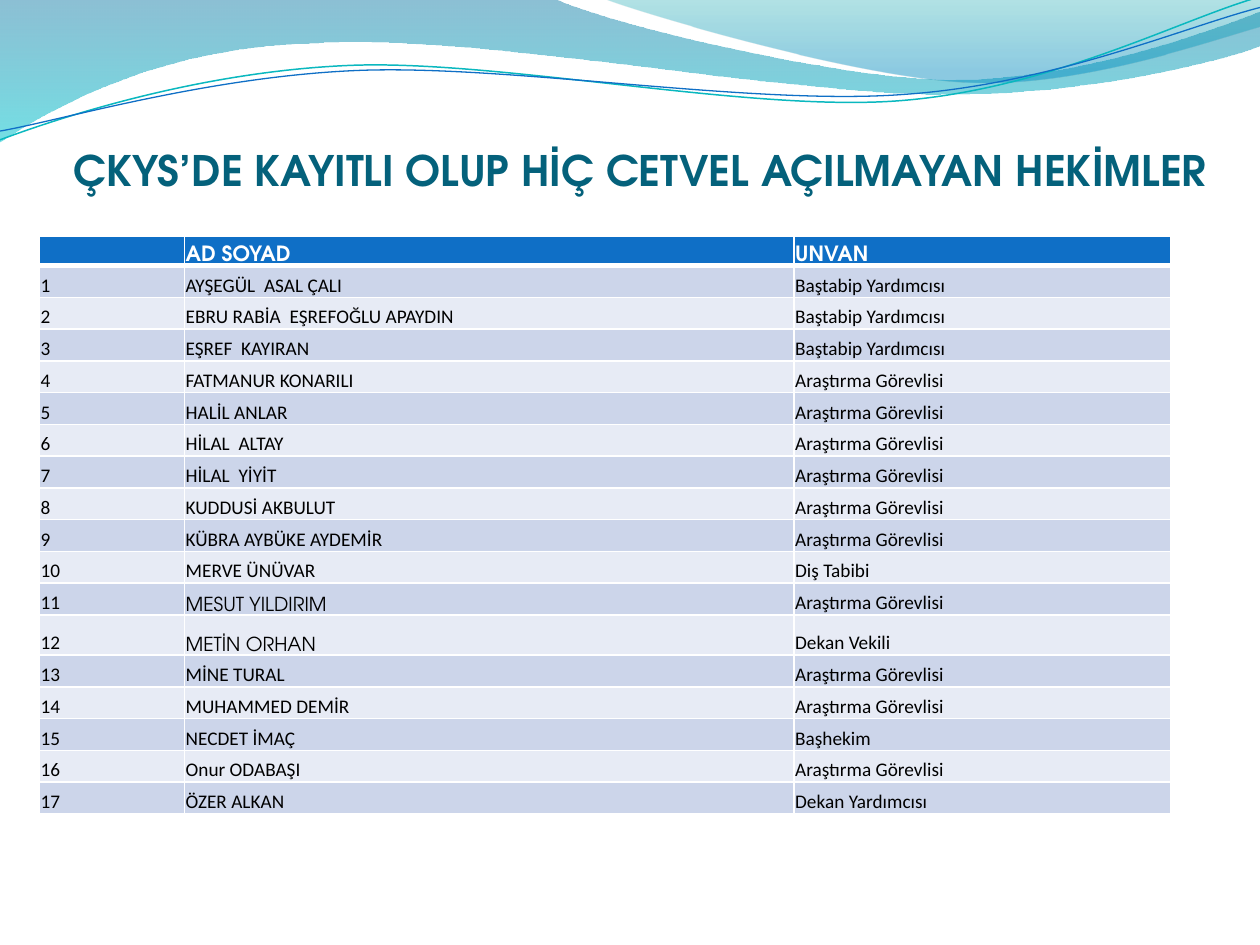
from itertools import chain
from math import cos, radians, sin

from lxml.etree import SubElement
from pptx import Presentation
from pptx.dml.color import RGBColor
from pptx.enum.text import MSO_ANCHOR as Anchor, PP_ALIGN as Align
from pptx.oxml.ns import qn
from pptx.util import Pt

WHITE = RGBColor(0xFF, 0xFF, 0xFF)
BLACK = RGBColor(0, 0, 0)
BLUE = RGBColor(0x0F, 0x6F, 0xC6)
TEAL = RGBColor(0x0A, 0xB8, 0xBF)
TITLE_TEAL = RGBColor(0x04, 0x61, 0x7B)
DEEP_BLUE = RGBColor(0x00, 0x74, 0xA1)
CYAN = RGBColor(0x00, 0xC6, 0xCF)
SEA_GREEN = RGBColor(0x00, 0xA1, 0xA9)
SKY_BLUE = RGBColor(0x00, 0x8B, 0xBF)
ODD_ROW = RGBColor(0xCC, 0xD5, 0xEA)
EVEN_ROW = RGBColor(0xE7, 0xEB, 0xF5)

DISPLAY, BODY = "TeX Gyre Adventor", "Calibri"
STRAND_TILT = 2.7

HEADER = ("", "AD SOYAD", "UNVAN")
RESIDENT, DEPUTY = "Araştırma Görevlisi", "Baştabip Yardımcısı"
DOCTORS = [
    ("AYŞEGÜL  ASAL ÇALI", DEPUTY),
    ("EBRU RABİA  EŞREFOĞLU APAYDIN", DEPUTY),
    ("EŞREF  KAYIRAN", DEPUTY),
    ("FATMANUR KONARILI", RESIDENT),
    ("HALİL ANLAR", RESIDENT),
    ("HİLAL  ALTAY", RESIDENT),
    ("HİLAL  YİYİT", RESIDENT),
    ("KUDDUSİ AKBULUT", RESIDENT),
    ("KÜBRA AYBÜKE AYDEMİR", RESIDENT),
    ("MERVE ÜNÜVAR", "Diş Tabibi"),
    ("MESUT YILDIRIM", RESIDENT),
    ("METİN ORHAN", "Dekan Vekili"),
    ("MİNE TURAL", RESIDENT),
    ("MUHAMMED DEMİR", RESIDENT),
    ("NECDET İMAÇ", "Başhekim"),
    ("Onur ODABAŞI", RESIDENT),
    ("ÖZER ALKAN", "Dekan Yardımcısı"),
]
DISPLAY_NAMES = {"MESUT YILDIRIM", "METİN ORHAN"}
TALL_ROW = 12


def outline(slide, box, start, segments, close):
    """Freeform from segments of one point (line) or three (cubic curve)."""
    left, top = box[:2]
    placed = [(Pt(left + x), Pt(top + y)) for x, y in chain([start], *segments)]
    builder = slide.shapes.build_freeform(*placed[0])
    builder.add_line_segments(placed[1:], close=close)
    shape = builder.convert_to_shape()
    shape.shadow.inherit = False
    # Join the lines of each three-point segment into one curve
    lines = iter(list(shape._element.spPr.iter(qn("a:lnTo"))))
    for segment in segments:
        first, *others = [next(lines) for _ in segment]
        if others:
            first.tag = qn("a:cubicBezTo")
        for line in others:
            first.append(line[0])
            line.getparent().remove(line)
    return shape


def add_wave(slide, box, start, segments, stops):
    wave = outline(slide, box, start, segments, True)
    wave.line.fill.background()
    wave.fill.gradient()
    wave.fill.gradient_angle = 270
    for stop, (position, colour, opacity) in zip(wave.fill.gradient_stops, stops):
        stop.position = position
        stop.color.rgb = colour
    for tint, (_, _, opacity) in zip(wave._element.spPr.iter(qn("a:srgbClr")), stops):
        SubElement(tint, qn("a:alpha"), val=str(opacity * 1000))


def add_strand(slide, box, start, segments, centre, colour, width):
    # Points are turned level first, then the shape carries the tilt
    c, s = cos(radians(STRAND_TILT)), sin(radians(STRAND_TILT))
    cx, cy = centre

    def level(point):
        dx, dy = point[0] - cx, point[1] - cy
        return cx + dx * c - dy * s, cy + dx * s + dy * c

    strand = outline(slide, box, level(start),
                     [[level(point) for point in segment] for segment in segments], False)
    strand.rotation = 360 - STRAND_TILT
    strand.fill.background()
    strand.line.color.rgb = colour
    strand.line.width = Pt(width)


def add_waves(slide, box):
    # Broad wave across the full width
    add_wave(slide, box, (0, 0), [
        [(316.8, -0.7)],
        [(342.7, 12.2), (478, 45.4), (545.8, 45.4)],
        [(614.2, 45.4), (689.8, 18.7), (720, 6.5)],
        [(720.7, 25.9)],
        [(707.8, 31.7), (626.4, 54.7), (537.1, 54)],
        [(447.8, 54), (275, 20.2), (185, 24.5)],
        [(92.9, 25.9), (33.1, 59.8), (-0.7, 81.4)],
        [(0, 0)],
    ], [(0, DEEP_BLUE, 45), (1, CYAN, 55)])
    # Smaller wave at the right
    add_wave(slide, box, (344.9, -0.7), [
        [(366.5, 7.9), (491, 44.6), (553.7, 46.8)],
        [(616.3, 49.7), (691.9, 23), (720, 15.1)],
        [(720, 0)],
        [(344.9, -0.7)],
    ], [(0, SEA_GREEN, 30), (0.8, SKY_BLUE, 45)])
    # Two thin strands
    add_strand(slide, box, (0, 79.9), [
        [(34.6, 67), (113.8, 41), (199.4, 37.4)],
        [(284.4, 33.8), (427, 64.1), (513.4, 57.6)],
        [(599.8, 51.1), (675.4, 10.8), (718.6, -1.4)],
    ], (359.3, 41.4), TEAL, 0.85)
    add_strand(slide, box, (0, 74.9), [
        [(33.8, 69.1), (118.1, 43.9), (203.8, 40.3)],
        [(290.2, 36.7), (429.8, 60.5), (516.2, 54)],
        [(601.9, 48.2), (677.5, 15.1), (720, 4.3)],
    ], (359.6, 42.5), BLUE, 0.75)


def add_run(paragraph, text, font, size, colour, bold=False):
    run = paragraph.add_run()
    run.text = text
    run.font.name, run.font.size, run.font.bold = font, Pt(size), bold
    run.font.color.rgb = colour


def add_title(slide, box):
    frame = slide.shapes.add_textbox(*map(Pt, box)).text_frame
    frame.word_wrap = True
    frame.vertical_anchor = Anchor.BOTTOM
    frame.margin_left = frame.margin_right = frame.margin_bottom = 0
    frame.margin_top = Pt(3.6)
    heading = frame.paragraphs[0]
    heading.alignment = Align.CENTER
    add_run(heading, "ÇKYS’DE KAYITLI OLUP HİÇ CETVEL AÇILMAYAN HEKİMLER",
            DISPLAY, 24, TITLE_TEAL, True)


def set_borders(cell, widths):
    for side, width in widths.items():
        border = SubElement(cell._tc.get_or_add_tcPr(), qn("a:ln" + side), w=str(Pt(width)))
        SubElement(SubElement(border, qn("a:solidFill")), qn("a:srgbClr"), val=str(WHITE))


def fill_cell(cell, text, row, fill):
    cell.margin_left = cell.margin_top = cell.margin_right = Pt(0.7)
    cell.margin_bottom = 0
    cell.vertical_anchor = Anchor.BOTTOM
    set_borders(cell, {"L": 1, "R": 1, "T": 3 if row == 1 else 1, "B": 3 if row == 0 else 1})
    cell.fill.solid()
    cell.fill.fore_color.rgb = fill
    paragraph = cell.text_frame.paragraphs[0]
    if not text:
        SubElement(paragraph._p, qn("a:endParaRPr"), sz="1200")
    elif row == 0:
        add_run(paragraph, text, DISPLAY, 12, WHITE, True)
    else:
        add_run(paragraph, text, DISPLAY if text in DISPLAY_NAMES else BODY, 11, BLACK)


def add_doctors(slide, box):
    rows = [HEADER] + [(str(n), *doctor) for n, doctor in enumerate(DOCTORS, 1)]
    table = slide.shapes.add_table(len(rows), len(HEADER), *map(Pt, box)).table
    for column, width in zip(table.columns, (82.8, 348.3, 215.5)):
        column.width = Pt(width)
    for r, texts in enumerate(rows):
        table.rows[r].height = Pt({0: 16.8, TALL_ROW: 23}.get(r, 18.16))
        fill = BLUE if r == 0 else ODD_ROW if r % 2 else EVEN_ROW
        for c, text in enumerate(texts):
            fill_cell(table.cell(r, c), text, r, fill)


def main():
    deck = Presentation()
    deck.slide_width, deck.slide_height = Pt(720), Pt(540)
    slide = deck.slides.add_slide(deck.slide_layouts[6])
    add_waves(slide, (0, 0, 720, 82))
    add_title(slide, (11.5, 62.2, 708.5, 49))
    add_doctors(slide, (22.6, 135, 646.6, 331))
    deck.save("out.pptx")


if __name__ == "__main__":
    main()
